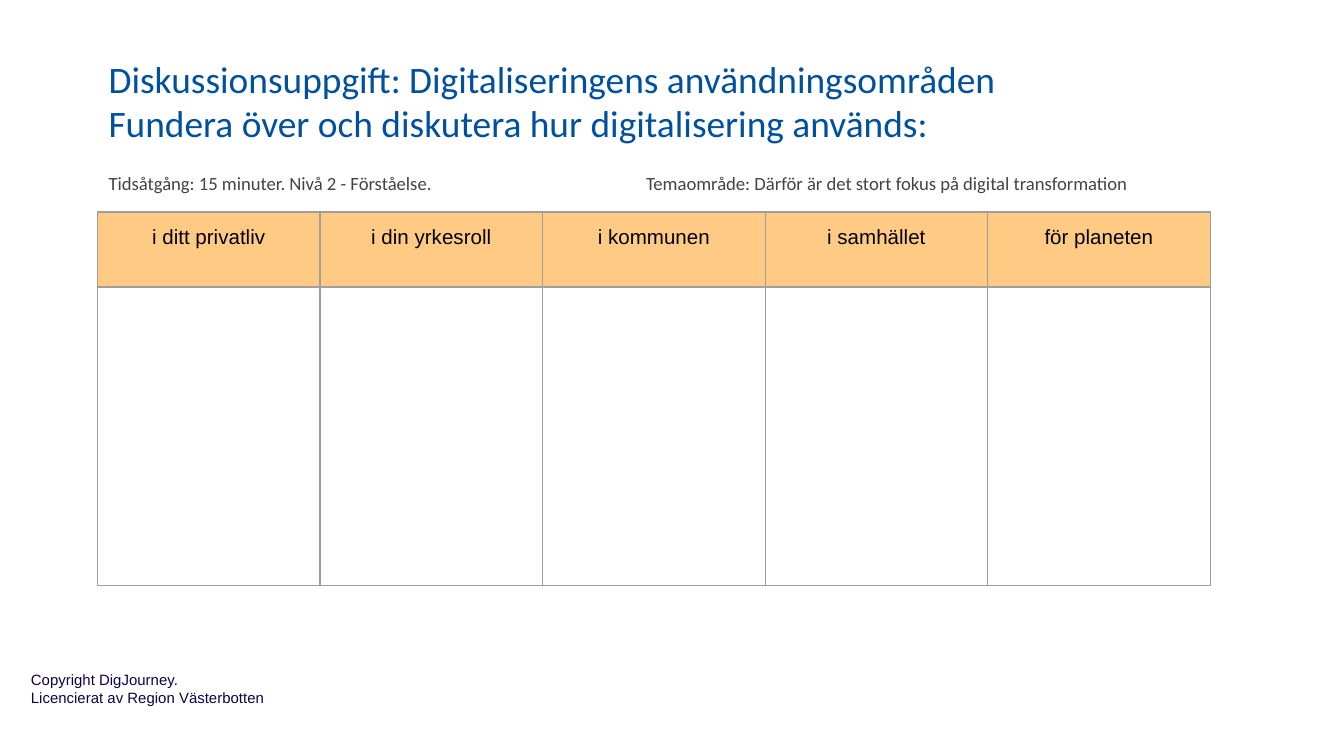
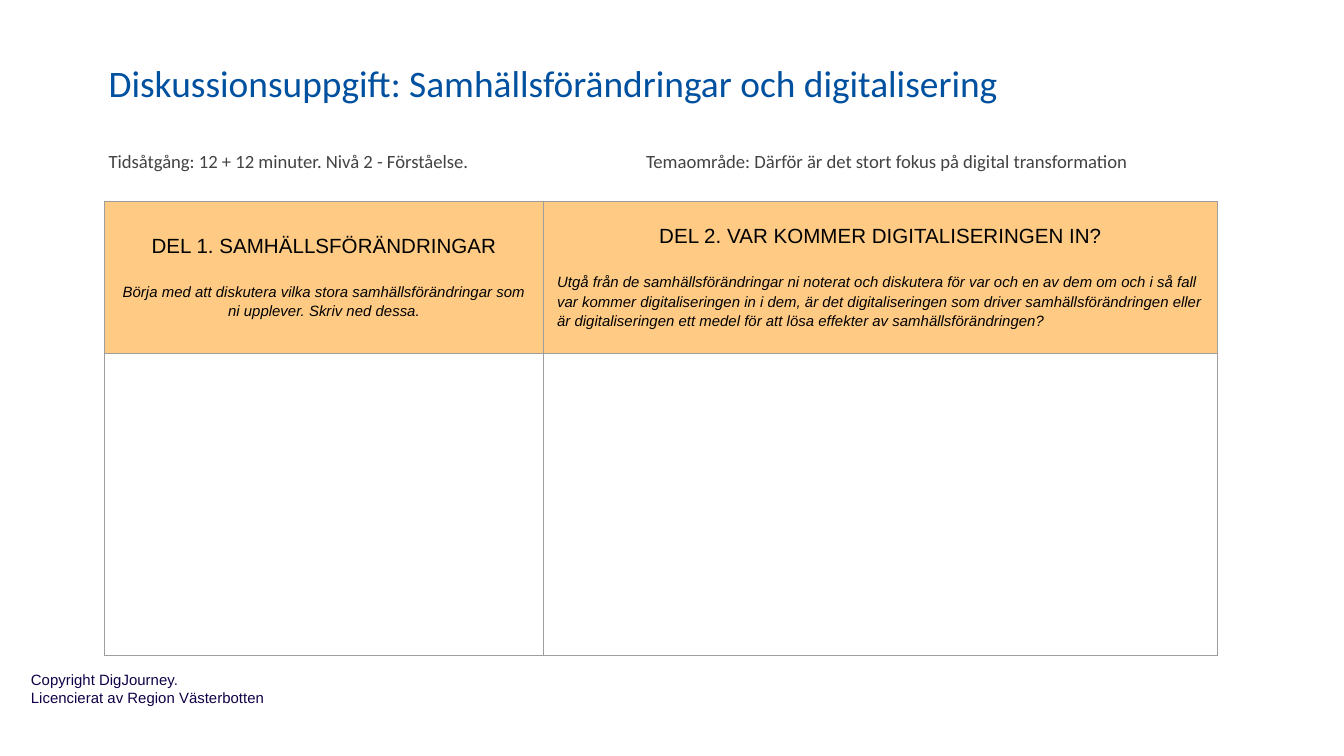
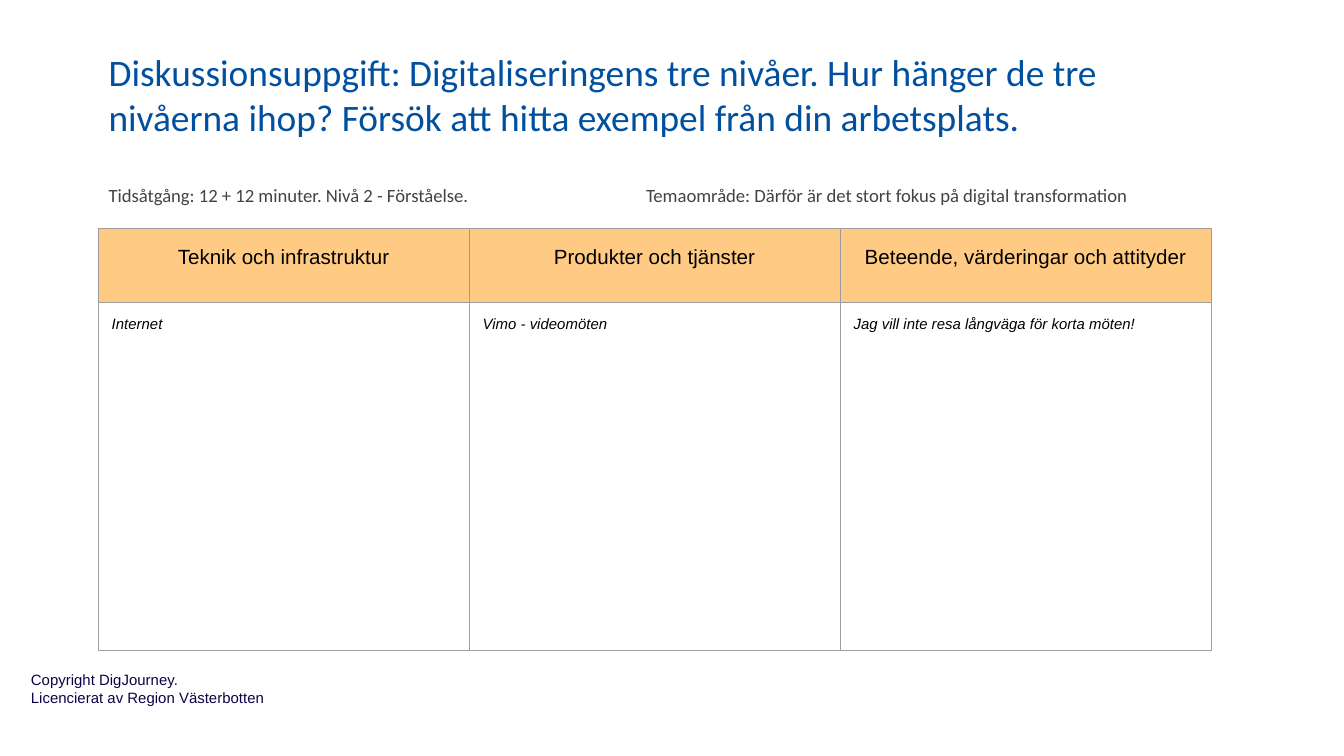
"""Build three discussion worksheets, each with a title, a time line and a table to fill in."""
import pptx
import pptx.dml.color
import pptx.enum.text
import pptx.oxml
import pptx.oxml.ns
import pptx.util

Pt = pptx.util.Pt
RGBColor = pptx.dml.color.RGBColor
ALIGN = pptx.enum.text.PP_ALIGN
ANCHOR = pptx.enum.text.MSO_ANCHOR

TITLE_BLUE = RGBColor(0x00, 0x50, 0xA0)
META_GREY = RGBColor(0x43, 0x43, 0x43)
FOOTER_NAVY = RGBColor(0x11, 0x00, 0x46)
HEADER_ORANGE = RGBColor(0xFF, 0xCB, 0x84)
BORDER_GREY = RGBColor(0x9E, 0x9E, 0x9E)
BLACK = RGBColor(0x00, 0x00, 0x00)

THEME = "Temaområde: Därför är det stort fokus på digital transformation"
FOOTER = ["Copyright DigJourney.", "Licencierat av Region Västerbotten"]
CELL_MARGIN = 7.2
TITLE_MARGIN = 2.16
THEME_TAB = 288

WORKSHEETS = [
    {
        "title": ["Diskussionsuppgift: Digitaliseringens användningsområden",
                  "Fundera över och diskutera hur digitalisering används:"],
        "title_box": (56, 1.5, 592.5, 104.5),
        "time": "Tidsåtgång: 15 minuter. Nivå 2 - Förståelse.",
        "time_gap": 14,
        "table_corner": (52.2, 113.6),
        "columns": [119.25] * 5,
        "rows": [40.2, 159.8],
        "headers": ["i ditt privatliv", "i din yrkesroll", "i kommunen",
                    "i samhället", "för planeten"],
        "header_spacing": 1.0,
        "header_anchor": ANCHOR.TOP,
        "instructions": [],
        "examples": [],
    },
    {
        "title": ["Diskussionsuppgift: Samhällsförändringar och digitalisering"],
        "title_box": (56, 21, 596, 73.5),
        "time": "Tidsåtgång: 12 + 12 minuter. Nivå 2 - Förståelse.",
        "time_gap": 24,
        "table_corner": (56, 108),
        "columns": [235.25, 361],
        "rows": [81.4, 162],
        "headers": ["DEL 1. SAMHÄLLSFÖRÄNDRINGAR",
                    "DEL 2. VAR KOMMER DIGITALISERINGEN IN?"],
        "header_spacing": 1.0,
        "header_anchor": ANCHOR.MIDDLE,
        "instructions": [
            ("Börja med att diskutera vilka stora samhällsförändringar som ni upplever. "
             "Skriv ned dessa.", ALIGN.CENTER),
            ("Utgå från de samhällsförändringar ni noterat och diskutera för var och en av "
             "dem om och i så fall var kommer digitaliseringen in i dem, är det "
             "digitaliseringen som driver samhällsförändringen eller är digitaliseringen "
             "ett medel för att lösa effekter av samhällsförändringen?", ALIGN.LEFT),
        ],
        "examples": [],
    },
    {
        "title": ["Diskussionsuppgift: Digitaliseringens tre nivåer. Hur hänger de tre "
                  "nivåerna ihop? Försök att hitta exempel från din arbetsplats."],
        "title_box": (56, 20, 593, 92.5),
        "time": "Tidsåtgång: 12 + 12 minuter. Nivå 2 - Förståelse.",
        "time_gap": 24,
        "table_corner": (52.6, 122.6),
        "columns": [198.75] * 3,
        "rows": [39.4, 186.4],
        "headers": ["Teknik och infrastruktur", "Produkter och tjänster",
                    "Beteende, värderingar och attityder"],
        "header_spacing": 1.15,
        "header_anchor": ANCHOR.TOP,
        "instructions": [],
        "examples": ["Internet", "Vimo - videomöten",
                     "Jag vill inte resa långväga för korta möten!"],
    },
]


def write(paragraph, text, name, size, color, italic=False):
    paragraph.text = text
    paragraph.font.name = name
    paragraph.font.size = Pt(size)
    paragraph.font.color.rgb = color
    paragraph.font.italic = italic


def add_lines(slide, box, margin, anchor, lines, name, size, color):
    frame = slide.shapes.add_textbox(*map(Pt, box)).text_frame
    frame.word_wrap = True
    frame.vertical_anchor = anchor
    frame.margin_left = frame.margin_right = Pt(margin)
    frame.margin_top = frame.margin_bottom = Pt(margin)
    for index, line in enumerate(lines):
        paragraph = frame.add_paragraph() if index else frame.paragraphs[0]
        write(paragraph, line, name, size, color)
    return frame


deck = pptx.Presentation()
deck.slide_width, deck.slide_height = Pt(720), Pt(405)

for sheet in WORKSHEETS:
    slide = deck.slides.add_slide(deck.slide_layouts[6])
    add_lines(slide, (9.5, 352, 236, 34), CELL_MARGIN, ANCHOR.TOP,
              FOOTER, "Arial", 8, FOOTER_NAVY)

    heading = add_lines(slide, sheet["title_box"], TITLE_MARGIN, ANCHOR.BOTTOM,
                        sheet["title"], "Calibri", 20, TITLE_BLUE)
    time_line = heading.add_paragraph()
    time_line.space_before = Pt(sheet["time_gap"])
    time_line._p.get_or_add_pPr().append(pptx.oxml.parse_xml(
        f'<a:tabLst {pptx.oxml.ns.nsdecls("a")}>'
        f'<a:tab pos="{Pt(THEME_TAB)}" algn="l"/></a:tabLst>'))
    write(time_line, f"{sheet['time']}\t{THEME}", "Calibri", 10, META_GREY)

    left, top = sheet["table_corner"]
    worksheet = slide.shapes.add_table(
        2, len(sheet["columns"]), Pt(left), Pt(top),
        Pt(sum(sheet["columns"])), Pt(sum(sheet["rows"]))).table
    worksheet.first_row = worksheet.horz_banding = False
    for column, width in zip(worksheet.columns, sheet["columns"]):
        column.width = Pt(width)
    for row, height in zip(worksheet.rows, sheet["rows"]):
        row.height = Pt(height)

    for cell in worksheet.iter_cells():
        cell.margin_left = cell.margin_right = Pt(CELL_MARGIN)
        cell.margin_top = cell.margin_bottom = Pt(CELL_MARGIN)
        for side in ("lnL", "lnR", "lnT", "lnB"):
            cell._tc.get_or_add_tcPr().append(pptx.oxml.parse_xml(
                f'<a:{side} {pptx.oxml.ns.nsdecls("a")} w="{Pt(0.75)}"><a:solidFill>'
                f'<a:srgbClr val="{BORDER_GREY}"/></a:solidFill></a:{side}>'))
        cell.fill.background()

    for index, header in enumerate(sheet["headers"]):
        cell = worksheet.cell(0, index)
        cell.fill.solid()
        cell.fill.fore_color.rgb = HEADER_ORANGE
        cell.vertical_anchor = sheet["header_anchor"]
        label = cell.text_frame.paragraphs[0]
        label.alignment = ALIGN.CENTER
        label.line_spacing = sheet["header_spacing"]
        write(label, header, "Arial", 11, BLACK)

    for index, (text, alignment) in enumerate(sheet["instructions"]):
        instruction = worksheet.cell(0, index).text_frame.add_paragraph()
        instruction.alignment = alignment
        instruction.line_spacing = 1.15
        instruction.space_before = Pt(12.6)
        write(instruction, text, "Arial", 8, BLACK, italic=True)

    for index, example in enumerate(sheet["examples"]):
        answer = worksheet.cell(1, index).text_frame.paragraphs[0]
        write(answer, example, "Arial", 8, BLACK, italic=True)

deck.save("out.pptx")
